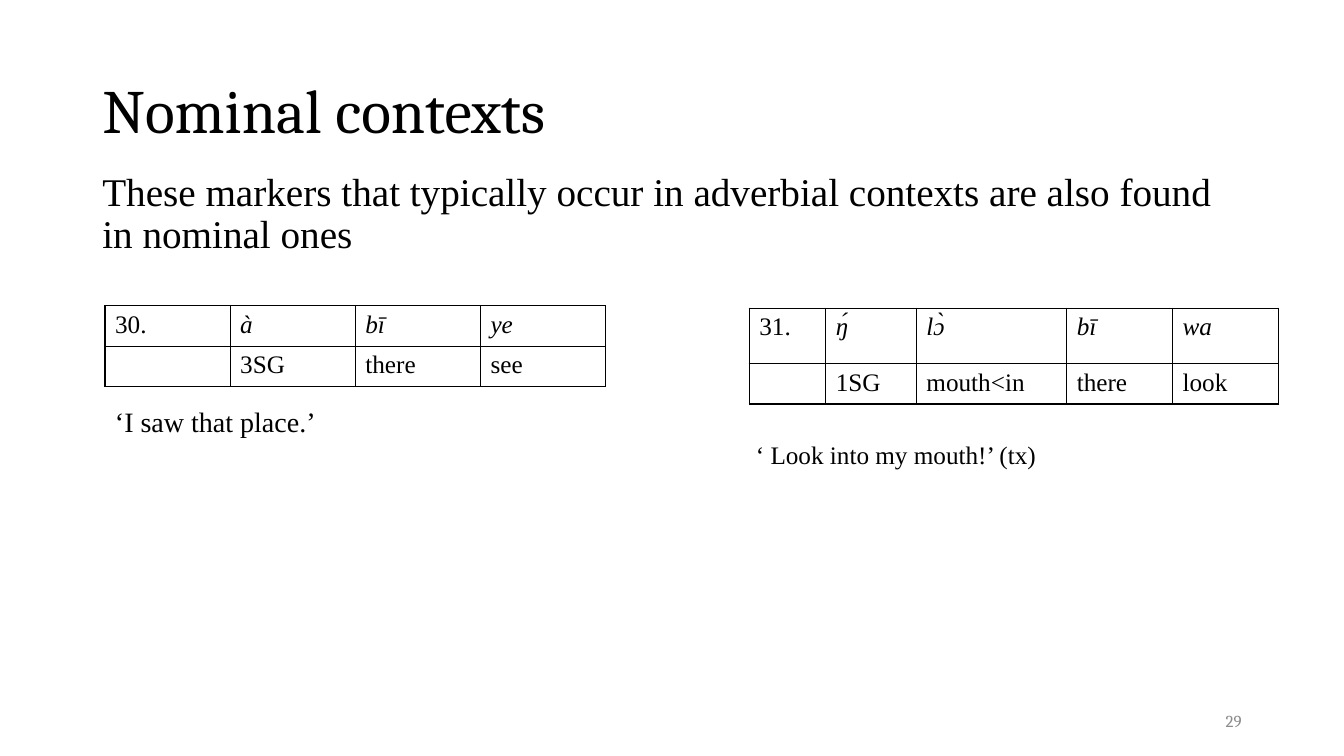
from lxml import etree
from pptx import Presentation
from pptx.dml.color import RGBColor
from pptx.enum.text import MSO_ANCHOR, PP_ALIGN
from pptx.oxml.ns import qn
from pptx.util import Inches, Pt

BLACK = RGBColor(0x00, 0x00, 0x00)
GREY = RGBColor(0x8C, 0x8C, 0x8C)
HEADING_FONT = "Cambria"
TEXT_FONT = "Times New Roman"
TOP, MIDDLE = MSO_ANCHOR.TOP, MSO_ANCHOR.MIDDLE
LEFT, RIGHT = PP_ALIGN.LEFT, PP_ALIGN.RIGHT
GRID_COLUMNS, GRID_ROWS = 160, 90
MARGIN, CONTENT_WIDTH = 11, 138
LINE_ROW = 4.8


def write(frame, text, font=TEXT_FONT, size=18, color=BLACK, italic=False,
          align=LEFT, spacing=1.0, before=0):
    para = frame.paragraphs[0]
    para.alignment = align
    para.line_spacing = spacing
    para.space_before = Pt(before)
    span = para.add_run()
    span.text = text
    span.font.name = font
    span.font.size = Pt(size)
    span.font.color.rgb = color
    span.font.italic = italic


class SlideBuilder:
    """Places elements on a slide in grid columns and rows."""

    def __init__(self, deck):
        self.page = deck.slides.add_slide(deck.slide_layouts[6])
        self.column = deck.slide_width / GRID_COLUMNS
        self.row = deck.slide_height / GRID_ROWS

    def place(self, left, top, width, height):
        return (round(left * self.column), round(top * self.row),
                round(width * self.column), round(height * self.row))

    def text(self, text, left, top, width, height, anchor=TOP, **style):
        box = self.page.shapes.add_textbox(*self.place(left, top, width, height))
        box.text_frame.word_wrap = True
        box.text_frame.vertical_anchor = anchor
        write(box.text_frame, text, **style)

    def gloss_table(self, left, top, widths, heights, number, words, glosses):
        frame = self.page.shapes.add_table(
            len(heights), len(widths),
            *self.place(left, top, sum(widths), sum(heights)))
        table = frame.table
        table.first_row = table.horz_banding = False
        for column, width in zip(table.columns, widths):
            column.width = round(width * self.column)
        for row, height in zip(table.rows, heights):
            row.height = round(height * self.row)
        for r, line in enumerate(([number, *words], ["", *glosses])):
            for c, text in enumerate(line):
                cell = table.cell(r, c)
                self.border(cell)
                cell.fill.background()
                write(cell.text_frame, text, italic=r == 0 and c > 0)

    def border(self, cell):
        properties = cell._tc.get_or_add_tcPr()
        for side in ("a:lnL", "a:lnR", "a:lnT", "a:lnB"):
            line = etree.SubElement(properties, qn(side), w=str(Pt(1)))
            fill = etree.SubElement(line, qn("a:solidFill"))
            etree.SubElement(fill, qn("a:srgbClr"), val=str(BLACK))


def main():
    deck = Presentation()
    deck.slide_width, deck.slide_height = Inches(13.33), Inches(7.5)
    slide = SlideBuilder(deck)

    # Heading, statement and page number
    slide.text("Nominal contexts", MARGIN, 4.8, CONTENT_WIDTH, 17.4,
               anchor=MIDDLE, font=HEADING_FONT, size=44, spacing=0.9)
    slide.text("These markers that typically occur in adverbial contexts "
               "are also found in nominal ones",
               MARGIN, 19.9, CONTENT_WIDTH, 17.4, size=28, spacing=0.9, before=10)
    slide.text("29", 113, 83.4, 36, LINE_ROW, anchor=MIDDLE,
               font=HEADING_FONT, size=12, color=GREY, align=RIGHT)

    # Example 30
    slide.gloss_table(12.5, 36.4, [14.9] * 4, [LINE_ROW] * 2, "30.",
                      ["à", "bī", "ye"], ["3SG", "there", "see"])
    slide.text("‘I saw that place.’", 12.5, 47.6, 80, 5.3, size=20)

    # Example 31
    slide.gloss_table(89.2, 36.7, [9.1, 10.8, 17.9, 12.6, 12.6], [6.6, LINE_ROW],
                      "31.", ["ŋ́", "lɔ̀", "bī", "wa"],
                      ["1SG", "mouth<in", "there", "look"])
    slide.text("‘ Look into my mouth!’ (tx)", 88.8, 51.7, 51.4, LINE_ROW)

    deck.save("out.pptx")


if __name__ == "__main__":
    main()
